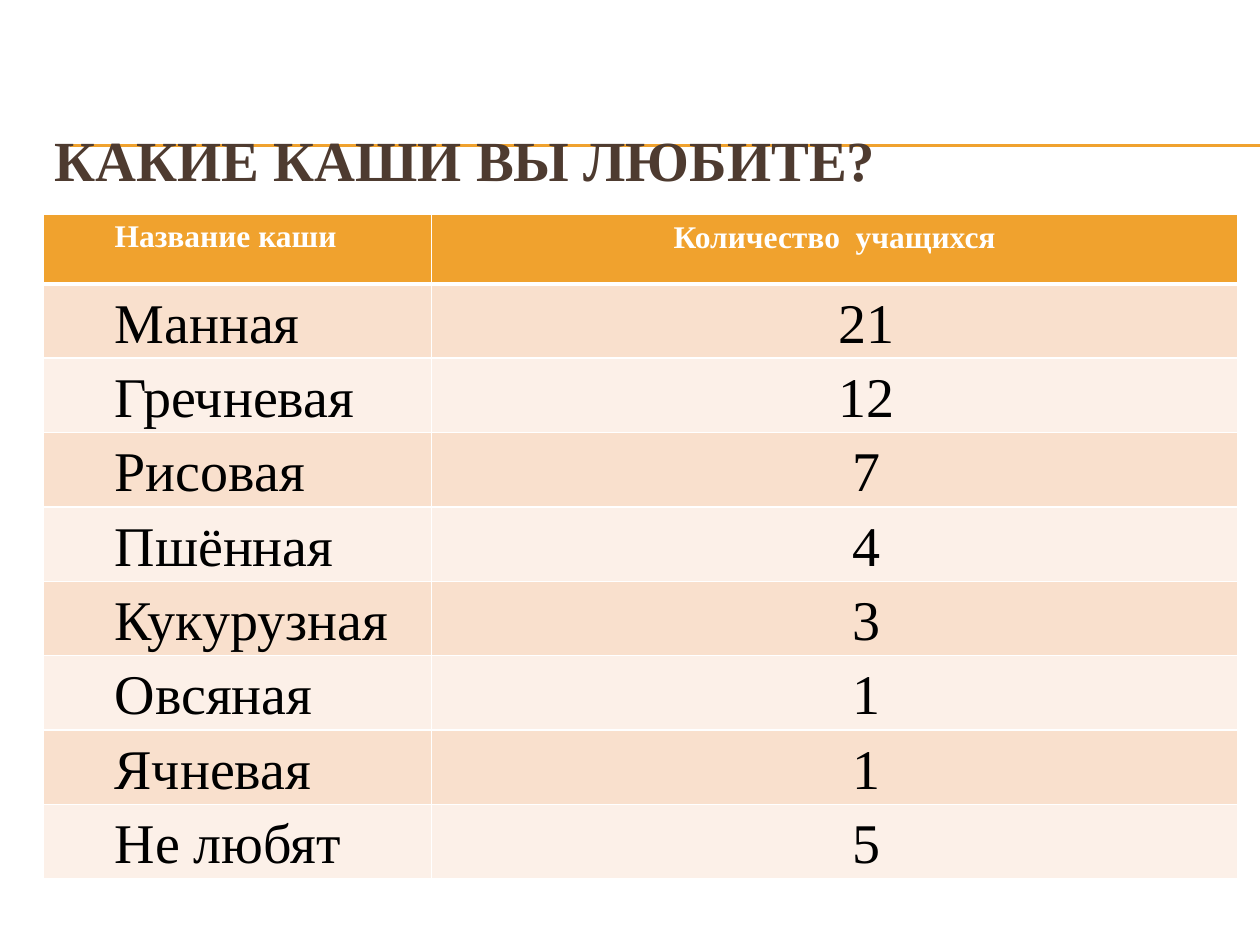
import dataclasses

import lxml.etree
import pptx
import pptx.dml.color
import pptx.enum.shapes
import pptx.enum.text
import pptx.oxml.ns
import pptx.util

Pt = pptx.util.Pt
ALIGN = pptx.enum.text.PP_ALIGN
FONT = "Times New Roman"
COLORS = {
    "accent": "F0A22E",
    "title": "4E3B30",
    "white": "FFFFFF",
    "black": "000000",
    "dark_band": "F9E0CD",
    "light_band": "FCF0E8",
}


@dataclasses.dataclass(frozen=True)
class Porridge:
    name: str
    pupils: int


@dataclasses.dataclass(frozen=True)
class CellStyle:
    fill: str
    color: str
    size: float
    bold: bool
    top: float = 1
    bottom: float = 1


PORRIDGES = [
    Porridge("Манная", 21),
    Porridge("Гречневая", 12),
    Porridge("Рисовая", 7),
    Porridge("Пшённая", 4),
    Porridge("Кукурузная", 3),
    Porridge("Овсяная", 1),
    Porridge("Ячневая", 1),
    Porridge("Не любят", 5),
]
HEADER = CellStyle("accent", "white", 18, True, bottom=3)


def rgb(name: str) -> pptx.dml.color.RGBColor:
    return pptx.dml.color.RGBColor.from_string(COLORS[name])


def add_text(paragraph, text: str, size: float, color: str, bold: bool) -> None:
    run = paragraph.add_run()
    run.text = text
    run.font.name = FONT
    run.font.size = Pt(size)
    run.font.bold = bold
    run.font.color.rgb = rgb(color)


def add_rule(slide, y: float) -> None:
    rule = slide.shapes.add_connector(
        pptx.enum.shapes.MSO_CONNECTOR.STRAIGHT, Pt(40.3), Pt(y), Pt(720), Pt(y)
    )
    rule.line.color.rgb = rgb("accent")
    rule.line.width = Pt(0.75)
    lxml.etree.SubElement(rule.element.spPr, pptx.oxml.ns.qn("a:effectLst"))


def set_borders(cell, style: CellStyle) -> None:
    properties = cell._tc.get_or_add_tcPr()
    widths = {"lnL": 1, "lnR": 1, "lnT": style.top, "lnB": style.bottom}
    for side, width in widths.items():
        border = lxml.etree.SubElement(
            properties, pptx.oxml.ns.qn(f"a:{side}"), w=str(Pt(width))
        )
        solid = lxml.etree.SubElement(border, pptx.oxml.ns.qn("a:solidFill"))
        lxml.etree.SubElement(
            solid, pptx.oxml.ns.qn("a:srgbClr"), val=COLORS["white"]
        )


def fill_cell(cell, text: str, style: CellStyle, align, indented: bool = True) -> None:
    set_borders(cell, style)
    cell.fill.solid()
    cell.fill.fore_color.rgb = rgb(style.fill)
    paragraph = cell.text_frame.paragraphs[0]
    paragraph.alignment = align
    if indented:
        cell.margin_left = cell.margin_right = Pt(5)
        cell.margin_top = cell.margin_bottom = Pt(0)
        paragraph.line_spacing = 1.15
        indent = paragraph._p.get_or_add_pPr()
        indent.set("marL", str(Pt(36)))
        indent.set("indent", "0")
    add_text(paragraph, text, style.size, style.color, style.bold)


def add_title(slide) -> None:
    title = slide.shapes.title
    title.left, title.top, title.width, title.height = Pt(24), Pt(36), Pt(684), Pt(66)
    frame = title.text_frame
    frame.word_wrap = True
    frame.auto_size = pptx.enum.text.MSO_AUTO_SIZE.NONE
    frame.vertical_anchor = pptx.enum.text.MSO_ANCHOR.MIDDLE
    frame.margin_top, frame.margin_bottom = Pt(43), Pt(0)
    frame.paragraphs[0].alignment = ALIGN.LEFT
    add_text(frame.paragraphs[0], "КАКИЕ КАШИ ВЫ ЛЮБИТЕ?", 32.4, "title", True)
    title.element.getparent().append(title.element)


def add_survey(slide) -> None:
    header_height, row_height = 39.6, 42.5
    survey = slide.shapes.add_table(
        len(PORRIDGES) + 1, 2, Pt(24.5), Pt(122.6), Pt(683),
        Pt(header_height + row_height * len(PORRIDGES)),
    ).table
    for column, width in zip(survey.columns, (222, 461)):
        column.width = Pt(width)
    for index, row in enumerate(survey.rows):
        row.height = Pt(row_height if index else header_height)

    fill_cell(survey.cell(0, 0), "Название каши", HEADER, ALIGN.JUSTIFY)
    fill_cell(survey.cell(0, 1), "Количество  учащихся", HEADER, ALIGN.CENTER, False)
    for index, porridge in enumerate(PORRIDGES, start=1):
        style = CellStyle(
            "dark_band" if index % 2 else "light_band", "black", 32, False,
            top=HEADER.bottom if index == 1 else 1,
        )
        fill_cell(survey.cell(index, 0), porridge.name, style, ALIGN.JUSTIFY)
        fill_cell(survey.cell(index, 1), str(porridge.pupils), style, ALIGN.CENTER)


def main() -> None:
    presentation = pptx.Presentation()
    presentation.slide_width, presentation.slide_height = Pt(720), Pt(540)
    slide = presentation.slides.add_slide(presentation.slide_layouts[5])
    for y in (82.8, 83.5):
        add_rule(slide, y)
    add_title(slide)
    add_survey(slide)
    presentation.save("out.pptx")


if __name__ == "__main__":
    main()
